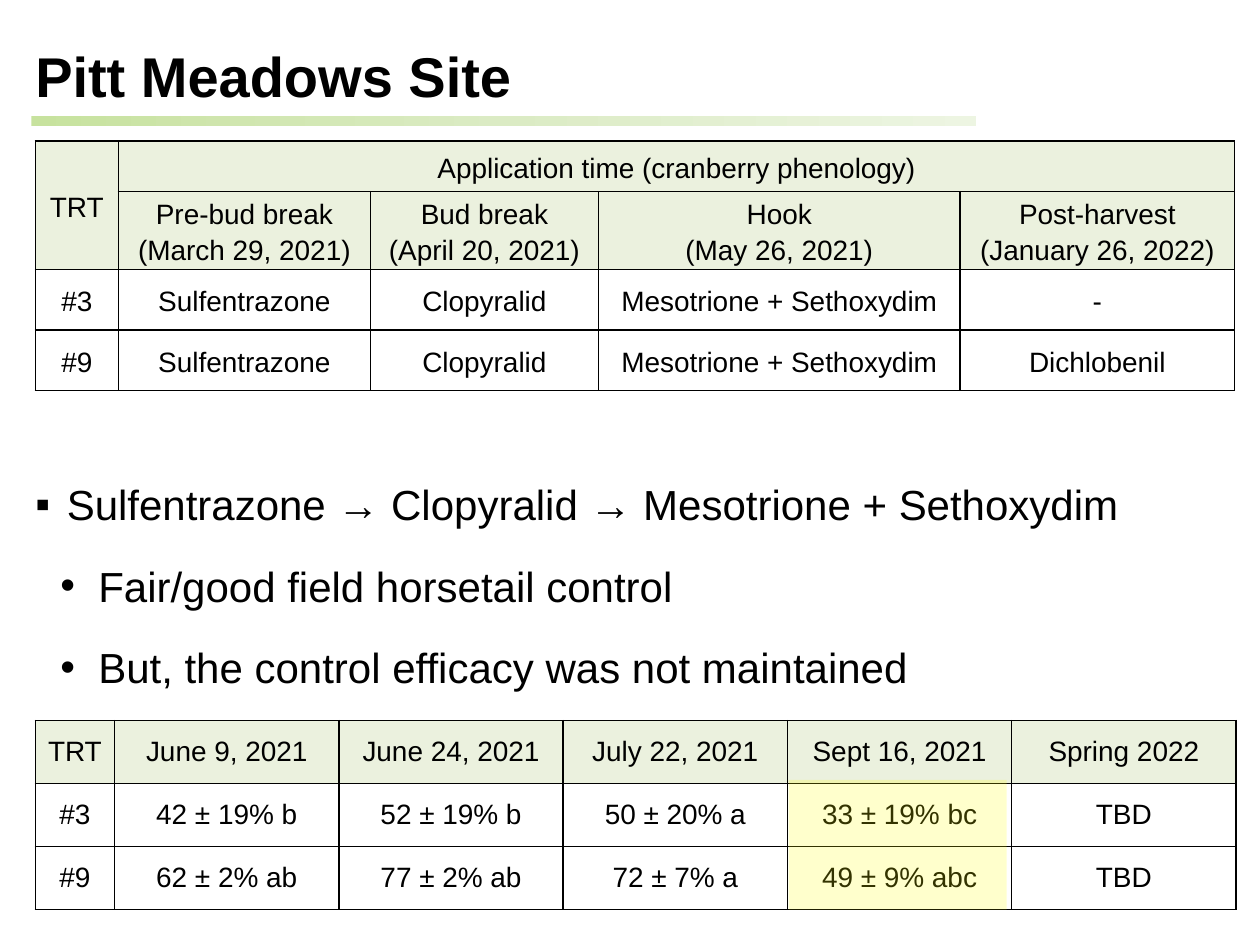
from copy import deepcopy

from lxml.etree import SubElement
from pptx import Presentation
from pptx.dml.color import RGBColor
from pptx.enum.shapes import MSO_SHAPE
from pptx.enum.text import MSO_ANCHOR, MSO_AUTO_SIZE, PP_ALIGN
from pptx.oxml.ns import qn
from pptx.util import Inches, Pt

COLORS = {
    "text": "000000", "header": "EBF1DE", "border": "000000", "highlight": "FFFF00",
    "bar start": "C7E29E", "bar middle": "DBEBC4", "bar end": "EDF5E2",
}
LEFT = 0.28


def write(frame, text, size, bold=False, align=PP_ALIGN.LEFT, spacing=1.0, before=0):
    """Fill a text frame with one paragraph for each line of text."""
    frame.text = text
    frame.word_wrap = True
    for paragraph in frame.paragraphs:
        paragraph.alignment = align
        paragraph.line_spacing = spacing
        paragraph.space_before = Pt(before)
        font = paragraph.runs[0].font
        font.name, font.size, font.bold = "Arial", Pt(size), bold
        font.color.rgb = RGBColor.from_string(COLORS["text"])


def add_grid(slide, top, widths, heights, rows, header_rows, inset, spacing, anchor):
    """Add a bordered table with tinted header rows."""
    table = slide.shapes.add_table(
        len(rows), len(widths), Inches(LEFT), Inches(top),
        Inches(sum(widths)), Inches(sum(heights))).table
    for column, width in zip(table.columns, widths):
        column.width = Inches(width)
    for row, height in zip(table.rows, heights):
        row.height = Inches(height)
    for row_index, texts in enumerate(rows):
        for column_index, text in enumerate(texts):
            cell = table.cell(row_index, column_index)
            cell.margin_left = cell.margin_right = Inches(inset)
            cell.margin_top = cell.margin_bottom = 0
            cell.vertical_anchor = anchor
            if text:
                write(cell.text_frame, text, 16, align=PP_ALIGN.CENTER, spacing=spacing)
            # Borders come before the fill in the cell's properties
            properties = cell._tc.get_or_add_tcPr()
            for side in ("a:lnL", "a:lnR", "a:lnT", "a:lnB"):
                line = SubElement(properties, qn(side), w=str(Pt(1)))
                solid = SubElement(line, qn("a:solidFill"))
                SubElement(solid, qn("a:srgbClr"), val=COLORS["border"])
            if row_index < header_rows:
                cell.fill.solid()
                cell.fill.fore_color.rgb = RGBColor.from_string(COLORS["header"])
            else:
                cell.fill.background()
    return table


presentation = Presentation()
presentation.slide_width, presentation.slide_height = Inches(10), Inches(7.5)
slide = presentation.slides.add_slide(presentation.slide_layouts[1])
title, body = slide.placeholders

# Gradient bar under the title
bar = slide.shapes.add_shape(
    MSO_SHAPE.RECTANGLE, Inches(0.25), Inches(0.92), Inches(7.5), Inches(0.08))
bar.shadow.inherit = False
bar.line.fill.background()
bar.fill.gradient()
bar.fill.gradient_angle = 0
first_stop = bar.fill._fill._gradFill.gsLst[0]
first_stop.addnext(deepcopy(first_stop))
for stop, position, name in zip(
        bar.fill.gradient_stops, (0, 0.5, 1), ("bar start", "bar middle", "bar end")):
    stop.position = position
    stop.color.rgb = RGBColor.from_string(COLORS[name])

# Title
title.left, title.top = Inches(0.18), Inches(0.28)
title.width, title.height = Inches(9.35), Inches(0.64)
title.text_frame.auto_size = MSO_AUTO_SIZE.NONE
write(title.text_frame, "Pitt Meadows Site", 32, bold=True)

# Bulleted findings: level, bullet, left margin and hanging indent
body.left, body.top = Inches(0.18), Inches(3.67)
body.width, body.height = Inches(9.63), Inches(1.89)
body.text_frame.auto_size = MSO_AUTO_SIZE.NONE
write(body.text_frame,
      "Sulfentrazone → Clopyralid → Mesotrione + Sethoxydim\n"
      "Fair/good field horsetail control\n"
      "But, the control efficacy was not maintained", 24, spacing=1.2, before=12)
bullets = [(0, "▪", 0.25, 0.25), (1, "•", 0.5, 0.3), (1, "•", 0.5, 0.3)]
for paragraph, (level, bullet, margin, hanging) in zip(body.text_frame.paragraphs, bullets):
    paragraph.level = level
    properties = paragraph._p.get_or_add_pPr()
    properties.set("marL", str(Inches(margin)))
    properties.set("indent", str(-Inches(hanging)))
    SubElement(properties, qn("a:buFont"), typeface="Arial")
    SubElement(properties, qn("a:buChar"), char=bullet)

# Treatment schedule
schedule = add_grid(
    slide, 1.12, [0.66, 2, 1.81, 2.87, 2.18], [0.4, 0.62, 0.48, 0.48],
    [["TRT", "Application time (cranberry phenology)", "", "", ""],
     ["", "Pre-bud break\n(March 29, 2021)", "Bud break\n(April 20, 2021)",
      "Hook\n(May 26, 2021)", "Post-harvest\n(January 26, 2022)"],
     ["#3", "Sulfentrazone", "Clopyralid", "Mesotrione + Sethoxydim", "-"],
     ["#9", "Sulfentrazone", "Clopyralid", "Mesotrione + Sethoxydim", "Dichlobenil"]],
    header_rows=2, inset=0.06, spacing=1.15, anchor=MSO_ANCHOR.MIDDLE)
schedule.cell(0, 0).merge(schedule.cell(1, 0))
schedule.cell(0, 1).merge(schedule.cell(0, 4))

# Control results
add_grid(
    slide, 5.72, [0.63] + [1.78] * 5, [0.5] * 3,
    [["TRT", "June 9, 2021", "June 24, 2021", "July 22, 2021", "Sept 16, 2021", "Spring 2022"],
     ["#3", "42 ± 19% b", "52 ± 19% b", "50 ± 20% a", "33 ± 19% bc", "TBD"],
     ["#9", "62 ± 2% ab", "77 ± 2% ab", "72 ± 7% a", "49 ± 9% abc", "TBD"]],
    header_rows=1, inset=0.07, spacing=1.5, anchor=MSO_ANCHOR.TOP)

# Translucent highlight over the September results
highlight = slide.shapes.add_shape(
    MSO_SHAPE.RECTANGLE, Inches(6.26), Inches(6.19), Inches(1.73), Inches(1.03))
highlight.shadow.inherit = False
highlight.line.fill.background()
highlight.fill.solid()
highlight.fill.fore_color.rgb = RGBColor.from_string(COLORS["highlight"])
color = highlight.fill._xPr.find(qn("a:solidFill")).find(qn("a:srgbClr"))
SubElement(color, qn("a:alpha"), val="20000")

presentation.save("out.pptx")
